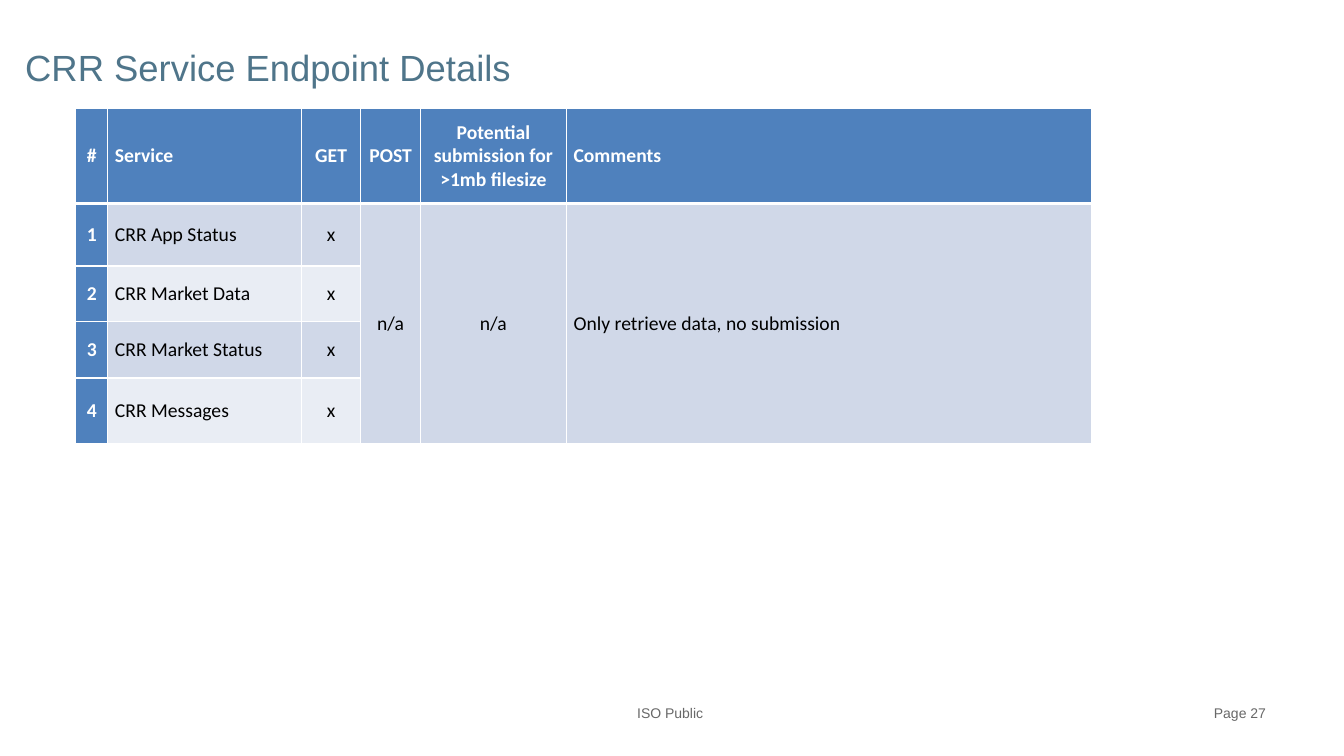
import pptx
import pptx.dml.color
import pptx.enum.text
import pptx.oxml
import pptx.oxml.ns
import pptx.util

Inches = pptx.util.Inches
Pt = pptx.util.Pt
ALIGN = pptx.enum.text.PP_ALIGN
MIDDLE = pptx.enum.text.MSO_ANCHOR.MIDDLE

HEADER_BLUE = "4F81BD"
ROW_TINTS = ("D0D8E8", "E9EDF4")
WHITE, BLACK = "FFFFFF", "000000"

COLUMN_WIDTHS = (0.32, 1.92, 0.59, 0.59, 1.45, 5.21)
ROW_HEIGHTS = (0.94, 0.62, 0.55, 0.56, 0.65)
LEFT_COLUMNS = (1, 5)
MERGED_COLUMNS = (3, 4, 5)

HEADINGS = ("#", "Service", "GET", "POST",
            "Potential submission for >1mb filesize", "Comments")
SERVICES = ("CRR App Status", "CRR Market Data",
            "CRR Market Status", "CRR Messages")
SHARED_ENTRIES = ("n/a", "n/a", "Only retrieve data, no submission")


def rgb(color):
    return pptx.dml.color.RGBColor.from_string(color)


def apply_format(target, values):
    for name, value in values.items():
        setattr(target, name, value)


def write(paragraph, text, font, size, color, bold=False):
    run = paragraph.add_run()
    run.text = text
    apply_format(run.font, {"name": font, "size": Pt(size), "bold": bold})
    run.font.color.rgb = rgb(color)


def add_label(slide, text, left, top, width, height, size, color):
    frame = slide.shapes.add_textbox(
        Inches(left), Inches(top), Inches(width), Inches(height)).text_frame
    apply_format(frame, {"margin_left": 0, "margin_right": 0, "margin_top": Inches(0.01),
                         "margin_bottom": 0, "word_wrap": True})
    write(frame.paragraphs[0], text, "Arial", size, color)


def add_borders(cell, top, bottom):
    properties = cell._tc.get_or_add_tcPr()
    for side, width in (("L", 1), ("R", 1), ("T", top), ("B", bottom)):
        properties.append(pptx.oxml.parse_xml(
            f'<a:ln{side} {pptx.oxml.ns.nsdecls("a")} w="{Pt(width)}">'
            f'<a:solidFill><a:srgbClr val="{WHITE}"/></a:solidFill></a:ln{side}>'))


def style_cell(cell, row, column):
    apply_format(cell, {"margin_left": Inches(0.07), "margin_right": Inches(0.07),
                        "margin_top": 0, "margin_bottom": 0,
                        "vertical_anchor": MIDDLE})
    # Thick rule under the heading row
    add_borders(cell, 3 if row == 1 else 1, 3 if row == 0 else 1)
    is_heading = row == 0 or column == 0
    tint = ROW_TINTS[0 if column in MERGED_COLUMNS else (row - 1) % 2]
    cell.fill.solid()
    cell.fill.fore_color.rgb = rgb(HEADER_BLUE if is_heading else tint)


def fill_cell(cell, text, row, column):
    is_heading = row == 0 or column == 0
    paragraph = cell.text_frame.paragraphs[0]
    paragraph.alignment = ALIGN.LEFT if column in LEFT_COLUMNS else ALIGN.CENTER
    write(paragraph, text, "Calibri", 14, WHITE if is_heading else BLACK, is_heading)


def add_endpoint_table(slide):
    endpoints = slide.shapes.add_table(
        len(ROW_HEIGHTS), len(COLUMN_WIDTHS), Inches(0.75), Inches(1.08),
        Inches(sum(COLUMN_WIDTHS)), Inches(sum(ROW_HEIGHTS))).table
    for column, width in zip(endpoints.columns, COLUMN_WIDTHS):
        column.width = Inches(width)
    for row, height in zip(endpoints.rows, ROW_HEIGHTS):
        row.height = Inches(height)

    # The last three columns share one entry across all services
    for column in MERGED_COLUMNS:
        endpoints.cell(1, column).merge(endpoints.cell(len(SERVICES), column))

    entries = [HEADINGS]
    for number, service in enumerate(SERVICES, 1):
        shared = SHARED_ENTRIES if number == 1 else ()
        entries.append((str(number), service, "x", *shared))
    for row, texts in enumerate(entries):
        for column in range(len(COLUMN_WIDTHS)):
            style_cell(endpoints.cell(row, column), row, column)
        for column, text in enumerate(texts):
            fill_cell(endpoints.cell(row, column), text, row, column)


def main():
    deck = pptx.Presentation()
    deck.slide_width, deck.slide_height = Inches(13.33), Inches(7.5)
    slide = deck.slides.add_slide(deck.slide_layouts[6])

    # Title
    add_label(slide, "CRR Service Endpoint Details", 0.25, 0.44, 7.08, 0.45, 26, "4F758A")

    # Service endpoints
    add_endpoint_table(slide)

    # Footer
    for text, left, width in (("ISO Public", 6.32, 0.75), ("Page 27", 12.04, 0.65)):
        add_label(slide, text, left, 6.98, width, 0.18, 10, "686868")

    deck.save("out.pptx")


if __name__ == "__main__":
    main()
